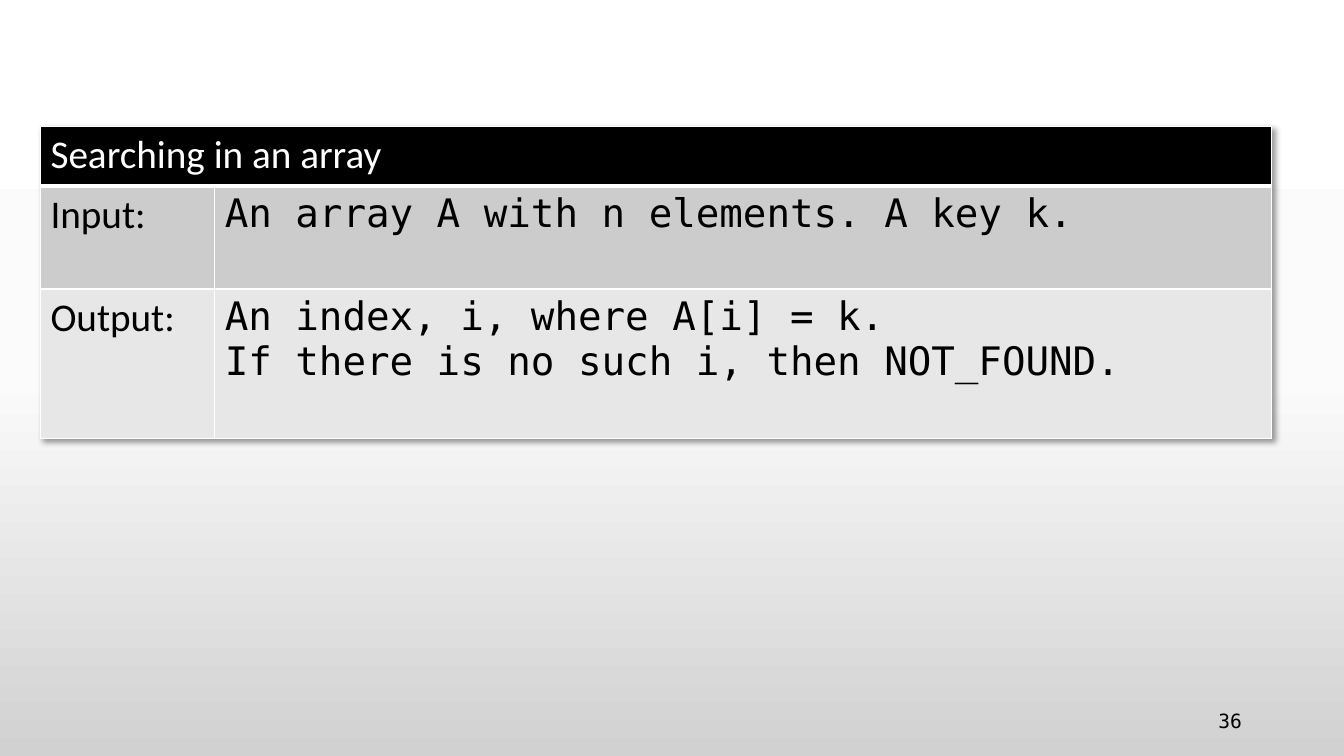
import copy
import lxml.etree
import pptx
import pptx.dml.color
import pptx.enum.text
import pptx.oxml.ns
import pptx.util

Cm = pptx.util.Cm
Pt = pptx.util.Pt
RGBColor = pptx.dml.color.RGBColor
qn = pptx.oxml.ns.qn

BLACK = RGBColor(0x00, 0x00, 0x00)
WHITE = RGBColor(0xFF, 0xFF, 0xFF)
DARK_BAND = RGBColor(0xCC, 0xCC, 0xCC)
LIGHT_BAND = RGBColor(0xE7, 0xE7, 0xE7)
BACKGROUND = [(0, WHITE), (0.5, RGBColor(0xFB, 0xFB, 0xFB)), (1, RGBColor(0xD1, 0xD1, 0xD1))]
LABEL_FONT = "Calibri"
CODE_FONT = "DejaVu Sans Mono"

PAGE_NUMBER = "36"
ROWS = [
    ("Searching in an array", "", BLACK, WHITE, 1.49),
    ("Input:", "An array A with n elements. A key k.", DARK_BAND, BLACK, 2.6),
    ("Output:", "An index, i, where A[i] = k.\nIf there is no such i, then NOT_FOUND.",
     LIGHT_BAND, BLACK, 3.76),
]
COLUMNS = [(4.39, LABEL_FONT), (26.63, CODE_FONT)]


def style_text(frame, font, size, color):
    for para in frame.paragraphs:
        for span in para.runs:
            span.font.name = font
            span.font.size = Pt(size)
            span.font.color.rgb = color


def set_borders(cell, top, bottom):
    properties = cell._tc.get_or_add_tcPr()
    for place, (side, points) in enumerate([("L", 1), ("R", 1), ("T", top), ("B", bottom)]):
        line = lxml.etree.Element(qn("a:ln" + side), w=str(Pt(points)))
        fill = lxml.etree.SubElement(line, qn("a:solidFill"))
        lxml.etree.SubElement(fill, qn("a:srgbClr"), val=str(WHITE))
        properties.insert(place, line)


def add_table_shadow(table):
    effects = lxml.etree.Element(qn("a:effectLst"))
    shadow = lxml.etree.SubElement(effects, qn("a:outerShdw"), blurRad=str(Pt(4)),
                                   dist=str(Pt(3)), dir="2700000", algn="tl", rotWithShape="0")
    color = lxml.etree.SubElement(shadow, qn("a:srgbClr"), val=str(BLACK))
    lxml.etree.SubElement(color, qn("a:alpha"), val="40000")
    table._tbl.tblPr.insert(0, effects)


def paint_background(page):
    fill = page.background.fill
    fill.gradient()
    fill.gradient_angle = 270
    stops = page.element.xpath(".//a:gsLst")[0]
    stops.append(copy.deepcopy(stops[-1]))
    for stop, (position, color) in zip(fill.gradient_stops, BACKGROUND):
        stop.position = position
        stop.color.rgb = color


def add_search_table(page):
    width = sum(size for size, font in COLUMNS)
    height = sum(row[-1] for row in ROWS)
    table = page.shapes.add_table(len(ROWS), len(COLUMNS), Cm(1.02), Cm(3.19),
                                  Cm(width), Cm(height)).table
    table.first_row = False
    table.horz_banding = False
    for index, (size, font) in enumerate(COLUMNS):
        table.columns[index].width = Cm(size)
    for index, (label, content, band, color, row_height) in enumerate(ROWS):
        table.rows[index].height = Cm(row_height)
        for column, text in enumerate((label, content)):
            cell = table.cell(index, column)
            cell.fill.solid()
            cell.fill.fore_color.rgb = band
            set_borders(cell, 3 if index == 1 else 1, 3 if index == 0 else 1)
            if text:
                cell.text_frame.text = text
                style_text(cell.text_frame, COLUMNS[column][1], 28, color)
    table.cell(0, 0).merge(table.cell(0, 1))
    add_table_shadow(table)


def add_page_number(page):
    box = page.shapes.add_textbox(Cm(23.93), Cm(17.65), Cm(7.62), Cm(1.02))
    frame = box.text_frame
    frame.word_wrap = True
    frame.vertical_anchor = pptx.enum.text.MSO_ANCHOR.MIDDLE
    frame.text = PAGE_NUMBER
    frame.paragraphs[0].alignment = pptx.enum.text.PP_ALIGN.RIGHT
    style_text(frame, CODE_FONT, 14, BLACK)


def main():
    deck = pptx.Presentation()
    deck.slide_width = Cm(33.87)
    deck.slide_height = Cm(19.05)
    page = deck.slides.add_slide(deck.slide_layouts[6])
    paint_background(page)
    add_page_number(page)
    add_search_table(page)
    deck.save("out.pptx")


if __name__ == "__main__":
    main()
